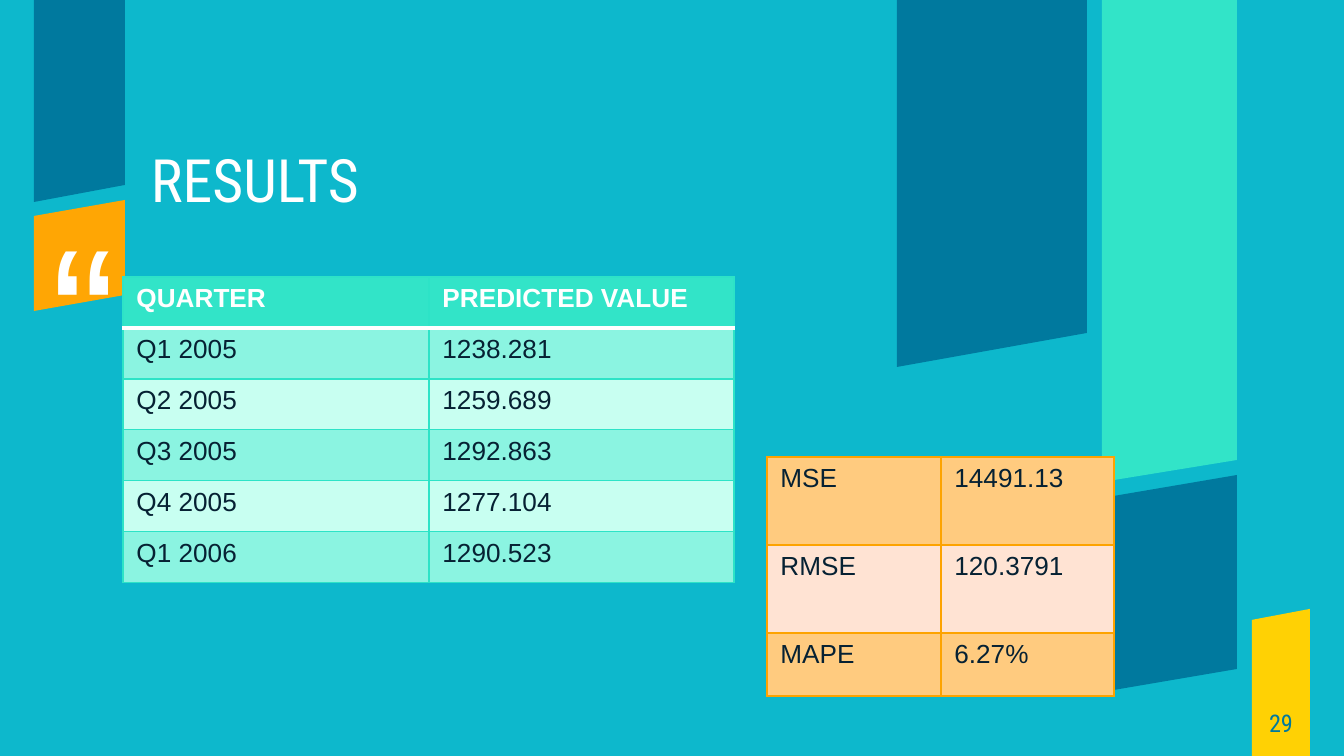
import pptx
import pptx.util
import pptx.dml.color
import pptx.enum.text
import pptx.oxml.ns
import lxml.etree

SCALE = 914400 / 134.4
ALIGN = pptx.enum.text.PP_ALIGN
ANCHOR = pptx.enum.text.MSO_ANCHOR
NAVY, MINT, ORANGE, GOLD = "00799E", "32E4C8", "FFA604", "FFD104"
WHITE, INK, TEAL = "FFFFFF", "062133", "0DB8CC"


def px(n):
    return round(n * SCALE)


def color(code):
    return pptx.dml.color.RGBColor.from_string(code)


def write(frame, text, size=14, font="Arial", ink=INK, bold=False,
          align=ALIGN.LEFT, line=None, after=None):
    para = frame.paragraphs[0]
    para.alignment = align
    if line:
        para.line_spacing = line
    if after:
        para.space_after = pptx.util.Pt(after)
    run = para.add_run()
    run.text = text
    run.font.size = pptx.util.Pt(size)
    run.font.name = font
    run.font.bold = bold
    run.font.color.rgb = color(ink)


def border(cell, side, code, width):
    props = cell._tc.get_or_add_tcPr()
    name = pptx.oxml.ns.qn
    edge = lxml.etree.Element(name(f"a:ln{side}"), w=str(pptx.util.Pt(width)))
    fill = lxml.etree.SubElement(edge, name("a:solidFill"))
    lxml.etree.SubElement(fill, name("a:srgbClr"), val=code)
    # Edges stand before the fill, in the order L, R, T, B
    props.insert("LRTB".index(side), edge)


class Deck:
    def __init__(self, width, height, back):
        self.show = pptx.Presentation()
        self.show.slide_width = px(width)
        self.show.slide_height = px(height)
        self.slide = self.show.slides.add_slide(self.show.slide_layouts[6])
        self.slide.background.fill.solid()
        self.slide.background.fill.fore_color.rgb = color(back)

    def band(self, left, right, tops, ends, fill):
        """Upright band; tops and ends give the heights at left and right."""
        pen = self.slide.shapes.build_freeform(px(left), px(tops[0]))
        pen.add_line_segments([(px(x), px(y)) for x, y in (
            (right, tops[1]), (right, ends[1]), (left, ends[0]))])
        shape = pen.convert_to_shape()
        shape.shadow.inherit = False
        shape.fill.solid()
        shape.fill.fore_color.rgb = color(fill)
        shape.line.fill.background()

    def label(self, box, text, anchor=ANCHOR.TOP, **style):
        frame = self.slide.shapes.add_textbox(*map(px, box)).text_frame
        frame.word_wrap = True
        frame.vertical_anchor = anchor
        frame.margin_left = frame.margin_right = 0
        frame.margin_top = frame.margin_bottom = 0
        write(frame, text, **style)

    def table(self, left, top, cols, rows, data, fills, edge, head=None):
        """Rows take the fills in turn; head fills a title row."""
        grid = self.slide.shapes.add_table(
            len(rows), len(cols), px(left), px(top),
            px(sum(cols)), px(sum(rows))).table
        grid.first_row = head is not None
        grid.horz_banding = False
        for col, width in zip(grid.columns, cols):
            col.width = px(width)
        for row, height in zip(grid.rows, rows):
            row.height = px(height)
        for r, line in enumerate(data):
            title = head is not None and r == 0
            below = head is not None and r == 1
            fill = head if title else fills[(r - (head is not None)) % 2]
            for c, text in enumerate(line):
                cell = grid.cell(r, c)
                cell.fill.solid()
                cell.fill.fore_color.rgb = color(fill)
                write(cell.text_frame, text, bold=title,
                      ink=WHITE if title else INK)
                for side in "LRTB":
                    rule = title and side == "B" or below and side == "T"
                    border(cell, side, *((WHITE, 2) if rule else (edge, 0.75)))


deck = Deck(1344, 756, TEAL)

# Left bands, page band and quote mark
deck.band(34, 125, (216, 200), (311, 295), ORANGE)
deck.band(34, 125, (0, 0), (202, 185), NAVY)
deck.band(1252, 1310, (620, 609), (756, 756), GOLD)
deck.label((51, 191, 86, 98), "“", size=104, ink=WHITE)

# Right bands
deck.band(1102, 1237, (498, 475), (692, 669), NAVY)
deck.band(897, 1087, (0, 0), (367, 333), NAVY)
deck.band(1102, 1237, (0, 0), (482, 460), MINT)

# Title and page number
deck.label((151, 132, 879, 99), "RESULTS", size=32, font="Roboto Condensed",
           ink=WHITE, line=1.15, after=8)
deck.label((1252, 689, 58, 67), "29", anchor=ANCHOR.MIDDLE, size=13,
           font="Roboto Condensed", ink=NAVY, align=ALIGN.CENTER)

# Forecast by quarter
deck.table(123, 277, (306, 305), (51,) * 6, (
    ("QUARTER", "PREDICTED VALUE"),
    ("Q1 2005", "1238.281"),
    ("Q2 2005", "1259.689"),
    ("Q3 2005", "1292.863"),
    ("Q4 2005", "1277.104"),
    ("Q1 2006", "1290.523"),
), ("8BF4E1", "C8FFF1"), "2DE3C7", head=MINT)

# Error measures
deck.table(767, 457, (174, 173), (88, 88, 63), (
    ("MSE", "14491.13"),
    ("RMSE", "120.3791"),
    ("MAPE", "6.27%"),
), ("FFCB7F", "FFE3D3"), "FDA300")

deck.show.save("out.pptx")
